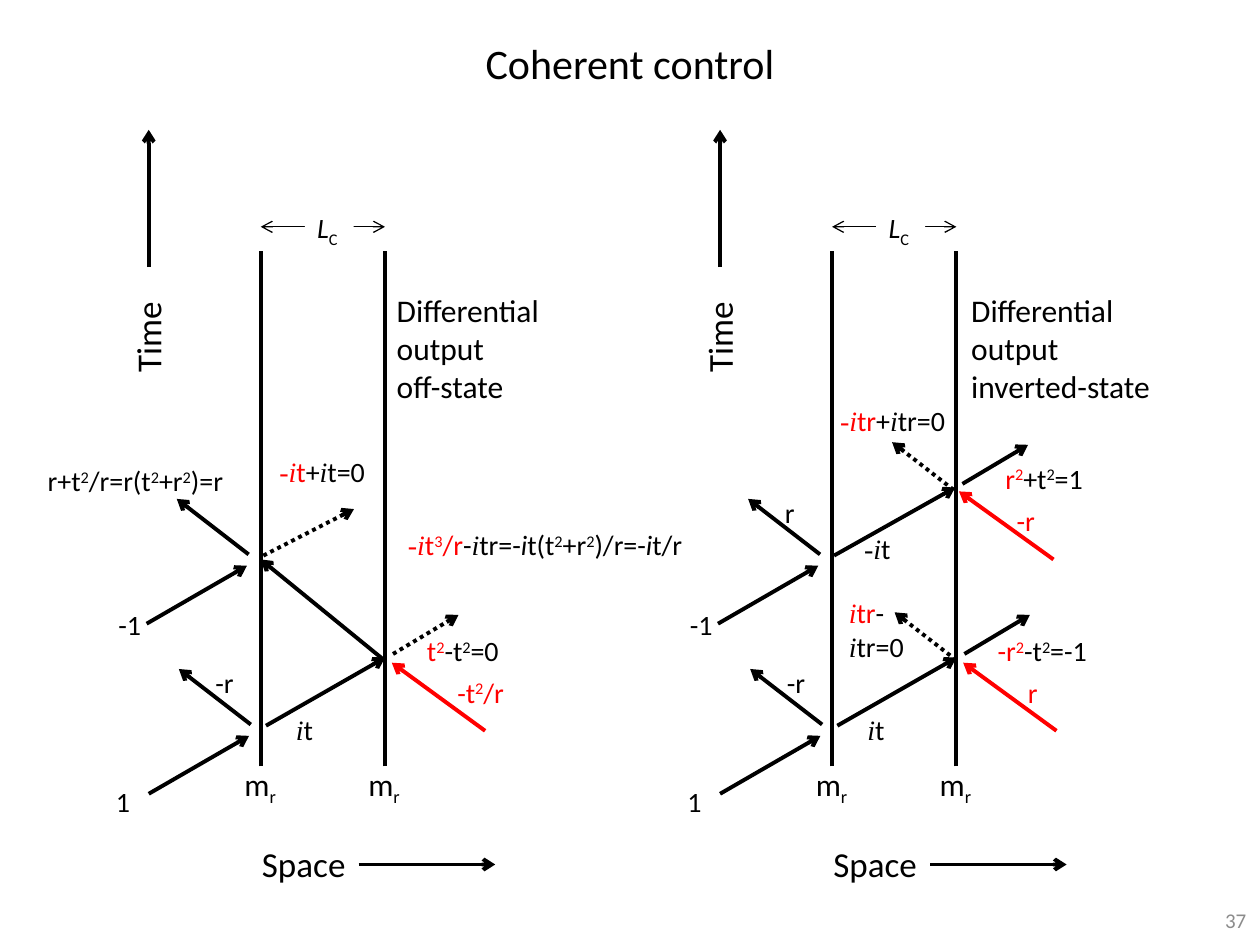
from dataclasses import dataclass

from lxml.etree import SubElement
from pptx import Presentation
from pptx.dml.color import RGBColor
from pptx.enum.dml import MSO_LINE as Dash
from pptx.enum.shapes import MSO_CONNECTOR as Connector
from pptx.enum.text import MSO_ANCHOR as Anchor, MSO_AUTO_SIZE as AutoSize, PP_ALIGN as Align
from pptx.oxml.ns import qn
from pptx.util import Pt


@dataclass(frozen=True)
class Theme:
    black = RGBColor(0, 0, 0)
    red = RGBColor(255, 0, 0)
    white = RGBColor(255, 255, 255)
    gray = RGBColor(0x8C, 0x8C, 0x8C)
    font = "Calibri"
    math_font = "Times New Roman"
    title = 24
    axis = 20
    body = 18
    formula = 16
    number = 12
    thick = 2.25
    thin = 0.75


theme = Theme()
deck = Presentation()
deck.slide_width, deck.slide_height = Pt(720), Pt(540)
page = deck.slides.add_slide(deck.slide_layouts[6])


def write(markup, left, top, width, height=26.6, size=theme.formula, wrap=False,
          color=theme.black, align=Align.LEFT, anchor=Anchor.TOP):
    """Add a text box. Toggles: | red, * math italic, ~ italic, ^ superscript, _ subscript."""
    box = page.shapes.add_textbox(Pt(left), Pt(top), Pt(width), Pt(height))
    frame = box.text_frame
    frame.word_wrap = wrap
    frame.auto_size = AutoSize.SHAPE_TO_FIT_TEXT if anchor == Anchor.TOP else AutoSize.NONE
    frame.vertical_anchor = anchor
    for number, line in enumerate(markup.split("\n")):
        para = frame.add_paragraph() if number else frame.paragraphs[0]
        para.alignment = align
        para.font.name, para.font.size = theme.font, Pt(size)
        para.font.color.rgb = color
        active = set()
        for mark in "|*~^_":
            line = line.replace(mark, f"\0{mark}\0")
        for piece in filter(None, line.split("\0")):
            if piece in "|*~^_":
                active ^= {piece}
                continue
            span = para.add_run()
            span.text = piece
            if "|" in active:
                span.font.color.rgb = theme.red
            if active & {"*", "~"}:
                span.font.italic = True
            if "*" in active:
                span.font.name = theme.math_font
            if active & {"^", "_"}:
                span.font._element.set("baseline", "30000" if "^" in active else "-25000")
    return box


def draw(x1, y1, x2, y2, color=theme.black, width=theme.thick, dotted=False, ends=("tailEnd",)):
    line = page.shapes.add_connector(Connector.STRAIGHT, Pt(x1), Pt(y1), Pt(x2), Pt(y2))
    line.line.color.rgb = color
    line.line.width = Pt(width)
    if dotted:
        line.line.dash_style = Dash.ROUND_DOT
    for end in ends:
        SubElement(line.line._get_or_add_ln(), qn(f"a:{end}"), type="arrow")
    SubElement(line._element.spPr, qn("a:effectLst"))


write("Coherent control", 0, 0, 720, 71.3, theme.title, True,
      align=Align.CENTER, anchor=Anchor.MIDDLE)

# Parts that both diagrams share, with the output ray dotted in the off-state
for shift, output_dotted in ((0, True), (326.5, False)):
    write("Space", shift + 142.6, 478, 62.6, 31.7, theme.axis)
    write("Time", shift + 56.9, 176.4, 55.4, 31.7, theme.axis).rotation = 270
    draw(shift + 205, 494, shift + 283, 494)
    draw(shift + 85, 152.6, shift + 85, 74.2)

    for mirror in (149, 219.8):
        draw(shift + mirror, 438, shift + mirror, 143.3, ends=())
        write("m_r_", shift + mirror - 16.4, 433.4, 33, 28.8, theme.body)

    draw(shift + 149, 129.6, shift + 220, 129.6, width=theme.thin, ends=("headEnd", "tailEnd"))
    length = write("~L~_C_", shift + 174.2, 116.6, 28, wrap=True)
    length.fill.solid()
    length.fill.fore_color.rgb = theme.white

    for back, up in ((0, 0), (1.2, 97.2)):
        draw(shift + 85 - back, 453.6 - up, shift + 142.3 - back, 420.5 - up)
        draw(shift + 143.3 - back, 414 - up, shift + 102.2 - back, 382.3 - up)
    draw(shift + 152, 414.7, shift + 220, 375.8)
    draw(shift + 224.6, 373.7, shift + 262, 351.4, dotted=output_dotted)
    draw(shift + 277.2, 417.6, shift + 223.9, 378.7, theme.red)

    write("1", shift + 59.2, 445, 23)
    write("-1", shift + 60.6, 343.4, 27.4)
    write("-r", shift + 116, 376.6, 25.2)
    write("*i*t", shift + 162, 403.9, 62, wrap=True)

# Rays of one diagram only
draw(219.6, 377.3, 149, 319.7)
draw(150.5, 317.5, 202.3, 290.9, dotted=True)
draw(476.6, 317.5, 545.8, 278.6)
draw(550, 276.5, 587.5, 254.2)
draw(602, 319.7, 548, 280.8, theme.red)
draw(546.5, 377.3, 511.2, 349.9, dotted=True)
draw(545, 280, 509.8, 252.7, dotted=True)

for markup, left, top, width in (
    ("r+t^2^/r=r(t^2^+r^2^)=r", 20.2, 261.4, 122.4),
    ("|*-i*t|+*i*t=0", 152.6, 256.3, 67.7),
    ("|*-i*t^3^/r|-*i*tr=-~i~t(t^2^+r^2^)/r=-~i~t/r", 226, 298, 181.4),
    ("|t^2^|-t^2^=0", 236.9, 358.6, 72.7),
    ("|*-i*tr|+*i*tr=0", 473, 226.8, 86.4),
    ("|r^2^|+t^2^=1", 567.4, 260, 72.7),
    ("*-i*t", 486.7, 300.2, 62),
    ("|*i*tr|-*i*tr=0", 478, 337, 65.5),
    ("|-r^2^|-t^2^=-1", 563, 358.6, 72.7),
):
    write(markup, left, top, width, wrap=True)

for markup, left, top, width in (
    ("|-t^2^/r|", 254.2, 382.3, 42.5),
    ("r", 441.4, 279.4, 20.2),
    ("|-r|", 573.8, 284.4, 25.2),
    ("|r|", 580.3, 382.3, 20.2),
):
    write(markup, left, top, width)

for state, left, width in (("off-state", 219.6, 97.2), ("inverted-state", 547.9, 117.4)):
    write(f"Differential\noutput\n{state}", left, 162.7, width, 72.7, theme.body)

write("37", 551.5, 511.2, 167.8, 28.8, theme.number, True, theme.gray, Align.RIGHT, Anchor.MIDDLE)

deck.save("out.pptx")
